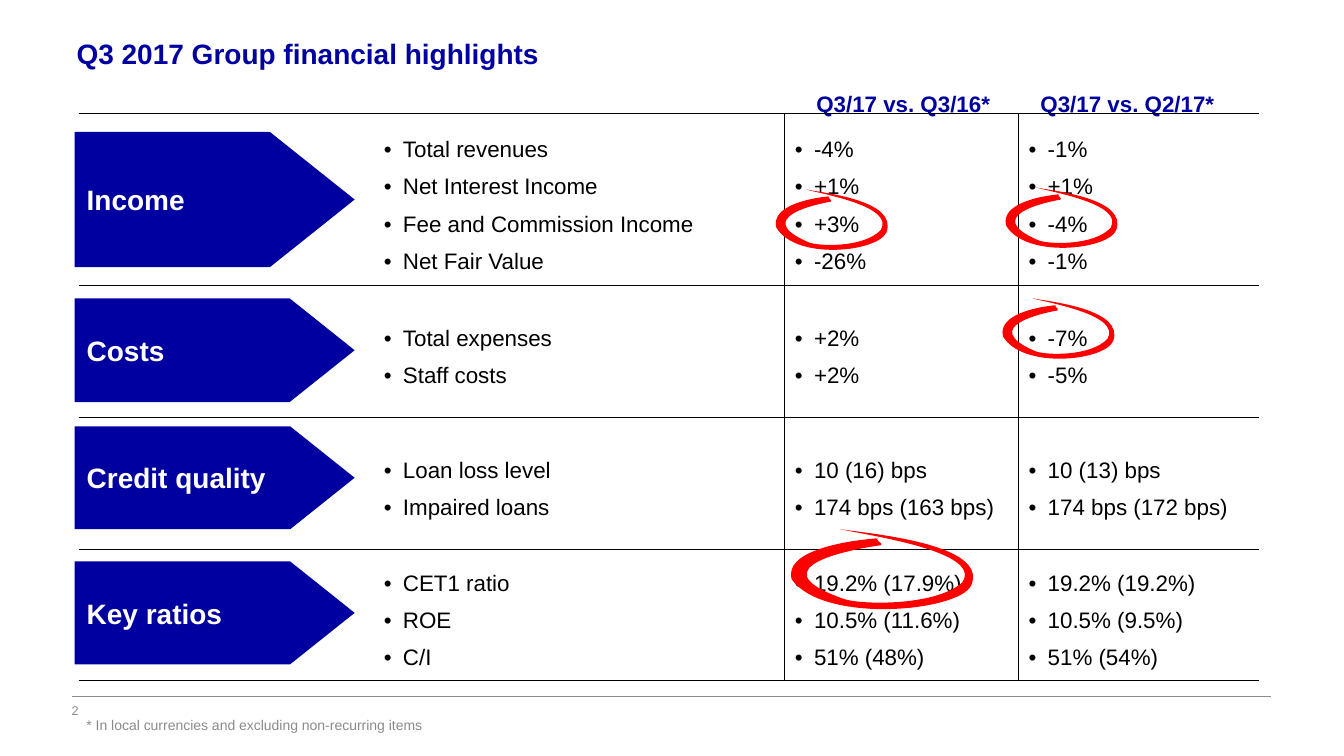
"""Builds the Q3 2017 Group financial highlights slide."""
from lxml import etree
from pptx import Presentation
from pptx.dml.color import RGBColor
from pptx.enum.shapes import MSO_CONNECTOR, MSO_SHAPE
from pptx.enum.text import MSO_ANCHOR, PP_ALIGN
from pptx.oxml.ns import qn
from pptx.util import Inches, Pt

BLUE = RGBColor(0x00, 0x00, 0xA0)
GREY = RGBColor(0x8B, 0x8A, 0x8D)
RED = RGBColor(0xFF, 0x00, 0x00)
BLACK = RGBColor(0x00, 0x00, 0x00)
WHITE = RGBColor(0xFF, 0xFF, 0xFF)
LEFT, CENTER = PP_ALIGN.LEFT, PP_ALIGN.CENTER
TOP, MIDDLE = MSO_ANCHOR.TOP, MSO_ANCHOR.MIDDLE
PENTAGON = MSO_SHAPE.PENTAGON
STRAIGHT = MSO_CONNECTOR.STRAIGHT

deck = Presentation()
deck.slide_width, deck.slide_height = Inches(13.34), Inches(7.5)
slide = deck.slides.add_slide(deck.slide_layouts[6])
shapes = slide.shapes


def write(para, text, size, color, bold=False):
    run = para.add_run()
    run.text = text
    font = run.font
    font.name, font.size, font.bold = "Arial", Pt(size), bold
    font.color.rgb = color


def border(props, side, shown):
    line = etree.SubElement(props, qn("a:ln" + side), w=str(Pt(1)))
    if shown:
        fill = etree.SubElement(line, qn("a:solidFill"))
        etree.SubElement(fill, qn("a:srgbClr"), val=str(BLACK))
    else:
        etree.SubElement(line, qn("a:noFill"))


rule = shapes.add_connector(STRAIGHT, Inches(0.71), Inches(6.91), Inches(12.62), Inches(6.91))
rule.line.color.rgb = GREY
rule.line.width = Pt(0.75)
etree.SubElement(rule._element.spPr, qn("a:effectLst"))

labels = [
    ("Q3 2017 Group financial highlights", 0.76, 0.36, 11.94, 0.79, 0, 0, 20, BLUE, True, LEFT, TOP, True),
    ("2", 0.71, 6.97, 0.35, 0.16, 0, 0, 9, GREY, False, LEFT, MIDDLE, True),
    ("* In local currencies and excluding non-recurring items",
     0.76, 7.06, 3.56, 0.27, 0.1, 0.05, 10, GREY, False, LEFT, TOP, False),
]
rows = [
    (["Total revenues", "Net Interest Income", "Fee and Commission Income", "Net Fair Value"],
     ["-4%", "+1%", "+3%", "-26%"],
     ["-1%", "+1%", "-4%", "-1%"]),
    (["Total expenses", "Staff costs"], ["+2%", "+2%"], ["-7%", "-5%"]),
    (["Loan loss level", "Impaired loans"],
     ["10 (16) bps", "174 bps (163 bps)"],
     ["10 (13) bps", "174 bps (172 bps)"]),
    (["CET1 ratio", "ROE", "C/I"],
     ["19.2% (17.9%)", "10.5% (11.6%)", "51% (48%)"],
     ["19.2% (19.2%)", "10.5% (9.5%)", "51% (54%)"]),
]
labels += [
    ("Q3/17 vs. Q3/16*", 7.77, 0.83, 2.39, 0.39, 0.12, 0.06, 16, BLUE, True, CENTER, TOP, True),
    ("Q3/17 vs. Q2/17*", 9.98, 0.83, 2.42, 0.39, 0.12, 0.06, 16, BLUE, True, CENTER, TOP, True),
]
for text, x, y, w, h, side, edge, size, color, bold, align, anchor, wrap in labels:
    frame = shapes.add_textbox(Inches(x), Inches(y), Inches(w), Inches(h)).text_frame
    frame.margin_left = frame.margin_right = Inches(side)
    frame.margin_top = frame.margin_bottom = Inches(edge)
    frame.word_wrap, frame.vertical_anchor = wrap, anchor
    frame.paragraphs[0].alignment = align
    write(frame.paragraphs[0], text, size, color, bold)

table = shapes.add_table(4, 4, Inches(0.78), Inches(1.13), Inches(11.72), Inches(5.61)).table
table.first_row = table.horz_banding = False
for col, width in zip(table.columns, [2.93, 4.08, 2.32, 2.39]):
    col.width = Inches(width)
for row, height in zip(table.rows, [1.69, 1.31, 1.31, 1.3]):
    row.height = Inches(height)

for r, row in enumerate(rows):
    for c, items in enumerate([[], *row]):
        cell = table.cell(r, c)
        cell.vertical_anchor = MIDDLE
        props = cell._tc.get_or_add_tcPr()
        for side, shown in [("L", c > 1), ("R", c in (1, 2)), ("T", True), ("B", True)]:
            border(props, side, shown)
        cell.fill.background()
        frame = cell.text_frame
        for i, item in enumerate(items):
            para = frame.add_paragraph() if i else frame.paragraphs[0]
            para.line_spacing = 1.5
            style = para._p.get_or_add_pPr()
            style.set("marL", str(Inches(0.19)))
            style.set("indent", str(-Inches(0.19)))
            etree.SubElement(style, qn("a:buFont"), typeface="Arial")
            etree.SubElement(style, qn("a:buChar"), char="•")
            write(para, item, 16, BLACK)

arrows = [("Income", 1.31, 1.34), ("Costs", 2.96, 1.03),
          ("Credit quality", 4.23, 1.02), ("Key ratios", 5.57, 1.02)]
for text, y, h in arrows:
    arrow = shapes.add_shape(PENTAGON, Inches(0.74), Inches(y), Inches(2.78), Inches(h))
    arrow.adjustments[0] = 0.627
    arrow.shadow.inherit = False
    arrow.fill.solid()
    arrow.fill.fore_color.rgb = BLUE
    arrow.line.fill.background()
    frame = arrow.text_frame
    frame.margin_left = frame.margin_right = Inches(0.12)
    frame.margin_top = frame.margin_bottom = Inches(0.06)
    frame.vertical_anchor = MIDDLE
    frame.paragraphs[0].alignment = LEFT
    write(frame.paragraphs[0], text, 20, WHITE, True)

points = [
    (0.88, 0),
    (1.22, 0.05), (2.36, 0.15), (2.18, 0.56),
    (2.05, 0.82), (0.72, 0.94), (0.4, 0.5),
    (0.31, 0.21), (0.96, 0.12), (1.15, 0.1),
    (1.33, 0.08), (1.21, 0.1), (1.26, 0.12),
    (1.27, 0.13), (1.31, 0.15), (1.28, 0.16),
    (1.06, 0.19), (0, 0.37), (0.91, 0.69),
    (1.06, 0.75), (1.82, 0.77), (2.09, 0.53),
    (2.31, 0.22), (1.14, 0.06), (0.88, 0),
]
rings = [(9.74, 1.86, 1.45, 0.71), (9.71, 2.96, 1.45, 0.71),
         (7.46, 1.88, 1.45, 0.71), (7.46, 5.25, 2.36, 0.94)]
for x, y, w, h in rings:
    spots = [(Inches(x + px * w / 2.36), Inches(y + py * h / 0.94)) for px, py in points]
    pen = shapes.build_freeform(*spots[0])
    pen.add_line_segments(spots[1:], close=True)
    ring = pen.convert_to_shape()
    ring.shadow.inherit = False
    ring.fill.solid()
    ring.fill.fore_color.rgb = RED
    ring.line.fill.background()
    lines = list(ring._element.iter(qn("a:lnTo")))
    for i in range(0, len(lines), 3):
        curve = etree.Element(qn("a:cubicBezTo"))
        lines[i].addprevious(curve)
        for line in lines[i:i + 3]:
            curve.append(line[0])
            line.getparent().remove(line)

deck.save("out.pptx")
